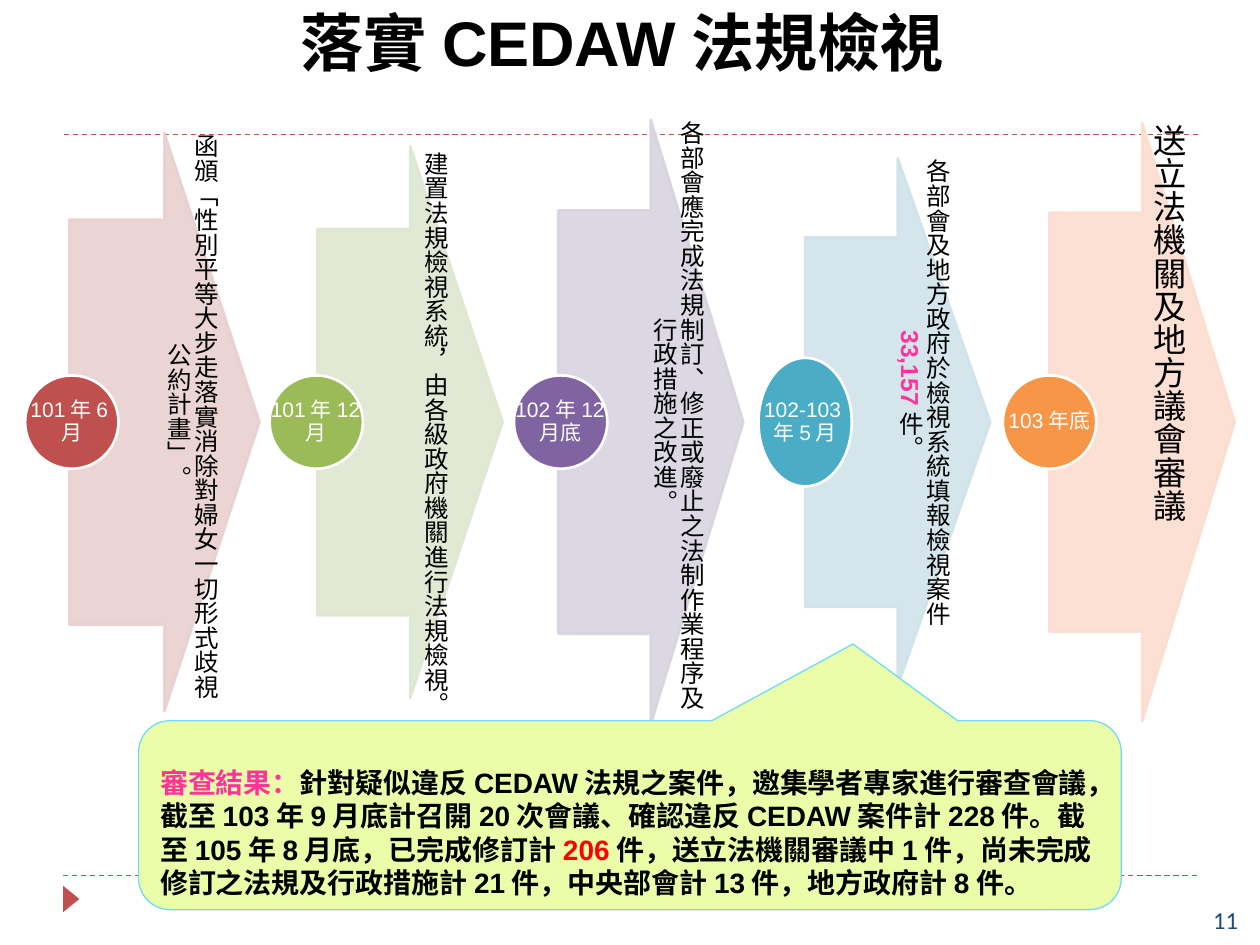
from dataclasses import dataclass

from lxml import etree
from pptx import Presentation
from pptx.dml.color import RGBColor
from pptx.enum import dml, shapes, text
from pptx.oxml.ns import qn
from pptx.util import Inches, Pt


@dataclass(frozen=True)
class Theme:
    font: str = "Arial"
    number_font: str = "Calibri"
    ink: str = "000000"
    white: str = "FFFFFF"
    accent: str = "C0504D"
    number: str = "1F497D"
    pink: str = "FF3399"
    red: str = "FF0000"
    callout_fill: str = "EBFDA9"
    callout_line: str = "71DAFF"
    title_size: int = 36
    final_size: int = 19
    callout_size: int = 16
    body_size: int = 14
    date_size: int = 12


@dataclass(frozen=True)
class Stage:
    date: str
    steps: tuple
    left: float
    width: float
    height: float
    tint: str
    color: str
    size: int = Theme.body_size
    badge_height: float = 0.74


THEME = Theme()
AXIS = 3.35
BADGE_LEFT, BADGE_PITCH, BADGE_WIDTH = 0.2, 1.94, 0.74

STAGES = (
    Stage("101年6月", (("函頒「性別平等大步走落實消除對婦女一切形式歧視公約計畫」。", THEME.ink, False),),
          0.55, 1.51, 4.59, "E8D0D0", "C0504D"),
    Stage("101年12月", (("建置法規檢視系統，由各級政府機關進行法規檢視。", THEME.ink, False),),
          2.52, 1.47, 4.38, "DEE7D1", "9BBB59"),
    Stage("102年12月底", (("各部會應完成法規制訂、修正或廢止之法制作業程序及行政措施之改進。", THEME.ink, False),),
          4.43, 1.47, 4.8, "D8D3E0", "8064A2"),
    Stage("102-103年5月", (("各部會及地方政府於檢視系統填報檢視案件", THEME.ink, False),
                         ("33,157", THEME.pink, True), ("件。", THEME.ink, False)),
          6.39, 1.47, 4.19, "D0E3EA", "4BACC6", badge_height=1.02),
    Stage("103年底", (("送立法機關及地方議會審議", THEME.ink, False),),
          8.33, 1.47, 4.75, "FCDDCF", "F79646", size=THEME.final_size),
)

REVIEW = (
    ("審查結果：", THEME.pink, True),
    ("針對疑似違反CEDAW法規之案件，邀集學者專家進行審查會議，截至103年9月底計召開20次會議、"
     "確認違反CEDAW案件計228件。截至105年8月底，已完成修訂計", THEME.ink, True),
    ("206", THEME.red, True),
    ("件，送立法機關審議中1件，尚未完成修訂之法規及行政措施計21件，中央部會計13件，地方政府計8件。",
     THEME.ink, True),
)


def rgb(value):
    return RGBColor.from_string(value)


def inches(box):
    return [Inches(length) for length in box]


def fill_text(frame, runs, size, insets, align=text.PP_ALIGN.LEFT, font=THEME.font, spacing=1.0):
    frame.word_wrap = True
    frame.vertical_anchor = text.MSO_ANCHOR.MIDDLE
    (frame.margin_left, frame.margin_top,
     frame.margin_right, frame.margin_bottom) = inches(insets)
    paragraph = frame.paragraphs[0]
    paragraph.alignment = align
    paragraph.line_spacing = spacing
    paragraph.font.name = font
    paragraph.font.size = Pt(size)
    for words, color, bold in runs:
        run = paragraph.add_run()
        run.text = words
        run.font.color.rgb = rgb(color)
        run.font.bold = bold


def add_label(slide, box, runs, size, insets, vertical=False, **style):
    label = slide.shapes.add_textbox(*inches(box))
    fill_text(label.text_frame, runs, size, insets, **style)
    if vertical:
        label.text_frame._txBody.find(qn("a:bodyPr")).set("vert", "eaVert")


def add_figure(slide, preset, box, fill, line=None, width=1.5):
    figure = slide.shapes.add_shape(preset, *inches(box))
    figure.shadow.inherit = False
    figure.fill.solid()
    figure.fill.fore_color.rgb = rgb(fill)
    if line:
        figure.line.color.rgb = rgb(line)
        figure.line.width = Pt(width)
    else:
        figure.line.fill.background()
    return figure


def add_rule(slide, left, top, width):
    rule = slide.shapes.add_connector(
        shapes.MSO_CONNECTOR.STRAIGHT, *inches((left, top, left + width, top)))
    rule.line.color.rgb = rgb(THEME.accent)
    rule.line.width = Pt(0.75)
    rule.line.dash_style = dml.MSO_LINE.DASH
    etree.SubElement(rule._element.spPr, qn("a:effectLst"))


def add_frame(slide):
    add_rule(slide, 0.51, 1.07, 9)
    add_rule(slide, 0.5, 6.95, 9)
    marker = add_figure(slide, shapes.MSO_SHAPE.ISOSCELES_TRIANGLE,
                        (0.46, 7.07, 0.21, 0.13), THEME.accent)
    marker.rotation = 90
    add_label(slide, (9.53, 7.1, 0.47, 0.4), (("11", THEME.number, False),),
              THEME.body_size, (0.1, 0.05, 0.1, 0.05), font=THEME.number_font)


def add_title(slide, box):
    add_label(slide, box, (("落實CEDAW法規檢視", THEME.ink, True),), THEME.title_size,
              (0.1, 0.05, 0.22, 0.05), align=text.PP_ALIGN.CENTER)


def add_stage(slide, stage, badge_left):
    top = AXIS - stage.height / 2
    arrow = add_figure(slide, shapes.MSO_SHAPE.RIGHT_ARROW,
                       (stage.left, top, stage.width, stage.height), stage.tint, stage.tint)
    arrow.adjustments[0] = 0.7
    arrow.adjustments[1] = 0.5
    for color in arrow._element.spPr.iter(qn("a:srgbClr")):
        etree.SubElement(color, qn("a:alpha"), val="90000")

    centred = {"align": text.PP_ALIGN.CENTER, "spacing": 0.9}
    steps_left = badge_left + BADGE_WIDTH
    steps_box = (steps_left, top, stage.left + stage.width - steps_left, stage.height)
    add_label(slide, steps_box, stage.steps, stage.size, (0.04, 0.01, 0.02, 0.01),
              vertical=True, **centred)

    badge_box = (badge_left, AXIS - stage.badge_height / 2, BADGE_WIDTH, stage.badge_height)
    add_figure(slide, shapes.MSO_SHAPE.OVAL, badge_box, stage.color, THEME.white)
    add_label(slide, badge_box, ((stage.date, THEME.white, False),), THEME.date_size,
              (0.01,) * 4, **centred)


def add_review(slide, box):
    callout = add_figure(slide, shapes.MSO_SHAPE.ROUNDED_RECTANGULAR_CALLOUT, box,
                         THEME.callout_fill, THEME.callout_line, 0.75)
    for index, value in enumerate((0.227, -0.906, 0.167)):
        callout.adjustments[index] = value
    fill_text(callout.text_frame, REVIEW, THEME.callout_size, (0.1, 0.32, 0.1, 0.05))


def main():
    deck = Presentation()
    deck.slide_width, deck.slide_height = Inches(10), Inches(7.5)
    slide = deck.slides.add_slide(deck.slide_layouts[6])
    add_frame(slide)
    add_title(slide, (0, -0.03, 10, 0.71))
    for index, stage in enumerate(STAGES):
        add_stage(slide, stage, BADGE_LEFT + index * BADGE_PITCH)
    add_review(slide, (1.1, 5.72, 7.8, 1.5))
    deck.save("out.pptx")


if __name__ == "__main__":
    main()
